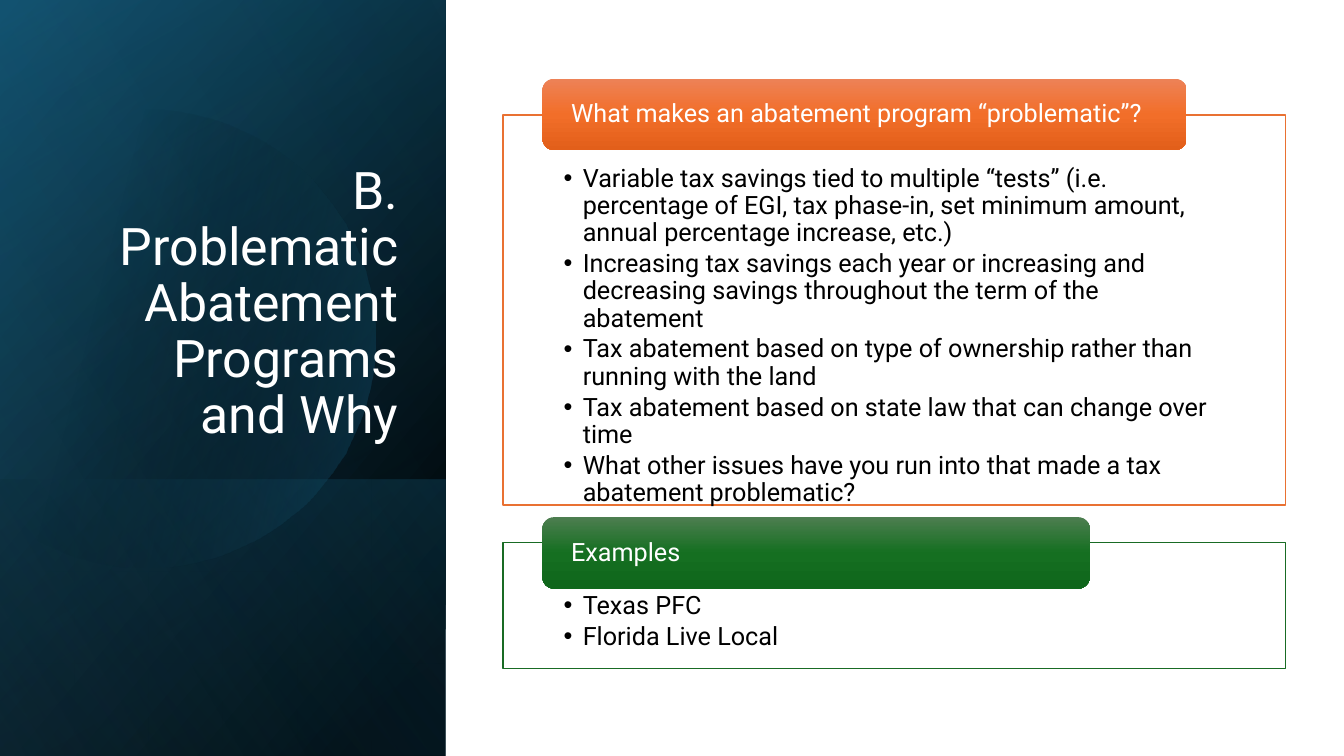
from math import cos, radians, sin

from lxml.etree import SubElement
from pptx import Presentation
from pptx.dml.color import RGBColor
from pptx.enum.shapes import MSO_SHAPE as Shape
from pptx.enum.text import MSO_ANCHOR as Anchor, MSO_AUTO_SIZE as AutoSize, PP_ALIGN as Align
from pptx.oxml.ns import qn
from pptx.util import Pt

PX = 9144  # 100 px to the inch
SLIDE_WIDTH, SLIDE_HEIGHT = 1333, 750
SIDEBAR_WIDTH = 442
PANEL_LEFT, PANEL_WIDTH = 499, 776
HEADER_LEFT, HEADER_HEIGHT = 538, 71

# Gradient stops: position, colour, opacity (all in percent but the colour)
BACKDROPS = [
    (0, SLIDE_HEIGHT, 50, [(8, "000000", 100), (100, "104862", 100)]),
    (0, SLIDE_HEIGHT, 30, [(0, "000000", 0), (99, "156082", 46)]),
    (476, 274, 130, [(2, "156082", 29), (100, "000000", 30)]),
]
GLOW = [(29, "000000", 0), (100, "156082", 43)]
SHEEN = (0, SLIDE_HEIGHT, 120, [(0, "000000", 0), (99, "46B1E1", 11)])

SECTIONS = [
    {
        "header": "What makes an abatement program “problematic”?",
        "header_top": 78, "header_width": 639, "shades": ["ED8257", "F26E29", "E25F1A"],
        "top": 114, "height": 387, "border": "E97132",
        "items": [
            "Variable tax savings tied to multiple “tests” (i.e. percentage of EGI, "
            "tax phase-in, set minimum amount, annual percentage increase, etc.)",
            "Increasing tax savings each year or increasing and decreasing savings "
            "throughout the term of the abatement",
            "Tax abatement based on type of ownership rather than running with the land",
            "Tax abatement based on state law that can change over time",
            "What other issues have you run into that made a tax abatement problematic?",
        ],
    },
    {
        "header": "Examples",
        "header_top": 513, "header_width": 543, "shades": ["4D7E50", "156F21", "0F661B"],
        "top": 538, "height": 125, "border": "196B24",
        "items": ["Texas PFC", "Florida Live Local"],
    },
]


def rgb(value):
    return RGBColor.from_string(value)


class SlideBuilder:
    font = "Roboto"

    def __init__(self, page):
        self.page = page

    def gradient(self, shape, angle, stops):
        shape.fill.gradient()
        properties = shape._element.spPr
        stop_list = properties.find(".//" + qn("a:gsLst"))
        for stop in list(stop_list):
            stop_list.remove(stop)
        for position, colour, opacity in stops:
            stop = SubElement(stop_list, qn("a:gs"), pos=str(position * 1000))
            tint = SubElement(stop, qn("a:srgbClr"), val=colour)
            if opacity < 100:
                SubElement(tint, qn("a:alpha"), val=str(opacity * 1000))
        properties.find(".//" + qn("a:lin")).set("ang", str(angle * 60000))
        shape.line.fill.background()
        shape.shadow.inherit = False

    def shape(self, kind, left, top, width, height):
        return self.page.shapes.add_shape(kind, left * PX, top * PX, width * PX, height * PX)

    def backdrop(self, top, height, angle, stops):
        """Add a sidebar layer, turned a quarter and mirrored so its gradient follows."""
        left = (SIDEBAR_WIDTH - height) // 2
        turned_top = top + (height - SIDEBAR_WIDTH) // 2
        layer = self.shape(Shape.RECTANGLE, left, turned_top, height, SIDEBAR_WIDTH)
        layer.rotation = 90
        layer._element.spPr.find(qn("a:xfrm")).set("flipH", "1")
        self.gradient(layer, angle, stops)

    def clipped_circle(self, x, y, radius, angle, stops):
        """Add a circle whose left part is cut off at the slide's edge."""
        points = [(x + radius * cos(radians(step)), y + radius * sin(radians(step)))
                  for step in range(-129, 130, 3)]
        builder = self.page.shapes.build_freeform(*points[0], scale=PX)
        builder.add_line_segments(points[1:], close=True)
        self.gradient(builder.convert_to_shape(), angle, stops)

    def place(self, placeholder, left, top, width, height):
        """Move a placeholder and bring it to the front."""
        placeholder.left, placeholder.top = left * PX, top * PX
        placeholder.width, placeholder.height = width * PX, height * PX
        self.page.shapes._spTree.append(placeholder._element)

    def frame(self, shape, anchor, insets):
        frame = shape.text_frame
        frame.word_wrap = True
        frame.auto_size = AutoSize.NONE
        frame.vertical_anchor = anchor
        (frame.margin_left, frame.margin_top,
         frame.margin_right, frame.margin_bottom) = [inset * PX for inset in insets]
        return frame

    def style(self, para, size, colour, align=Align.LEFT):
        para.alignment = align
        para.line_spacing = 0.9
        para.space_before = Pt(0)
        para.font.name = self.font
        para.font.size = Pt(size)
        para.font.color.rgb = rgb(colour)

    def title(self, text, *bounds):
        title = self.page.shapes.title
        self.place(title, *bounds)
        frame = self.frame(title, Anchor.BOTTOM, (10, 5, 10, 5))
        frame.text = text
        self.style(frame.paragraphs[0], 37, "FFFFFF", Align.RIGHT)

    def panel(self, body, items, border, top, height):
        self.place(body, PANEL_LEFT, top, PANEL_WIDTH, height)
        body.fill.solid()
        body.fill.fore_color.rgb = rgb("FFFFFF")
        body.line.color.rgb = rgb(border)
        body.line.width = Pt(1)
        frame = self.frame(body, Anchor.TOP, (60, 50, 60, 14))
        frame.text = "\n".join(items)
        for para in frame.paragraphs:
            self.style(para, 18, "000000")
            para.space_after = Pt(2.7)
            layout = para._p.get_or_add_pPr()
            layout.set("marL", str(19 * PX))
            layout.set("indent", str(-19 * PX))

    def header(self, text, shades, top, width):
        box = self.shape(Shape.ROUNDED_RECTANGLE, HEADER_LEFT, top, width, HEADER_HEIGHT)
        self.gradient(box, 90, [(50 * step, shade, 100) for step, shade in enumerate(shades)])
        frame = self.frame(box, Anchor.MIDDLE, (25, 0, 25, 0))
        frame.text = text
        self.style(frame.paragraphs[0], 18, "FFFFFF")


def main():
    deck = Presentation()
    deck.slide_width, deck.slide_height = SLIDE_WIDTH * PX, SLIDE_HEIGHT * PX
    page = deck.slides.add_slide(deck.slide_layouts.get_by_name("Two Content"))
    builder = SlideBuilder(page)

    for backdrop in BACKDROPS:
        builder.backdrop(*backdrop)
    builder.clipped_circle(145, 336, 227, 14, GLOW)
    builder.backdrop(*SHEEN)
    builder.title("B. Problematic Abatement Programs and Why", 64, 184, 341, 262)

    bodies = [item for item in page.placeholders if item.placeholder_format.idx > 0]
    for body, section in zip(bodies, SECTIONS):
        builder.panel(body, section["items"], section["border"], section["top"], section["height"])
        builder.header(section["header"], section["shades"],
                       section["header_top"], section["header_width"])

    deck.save("out.pptx")


if __name__ == "__main__":
    main()
